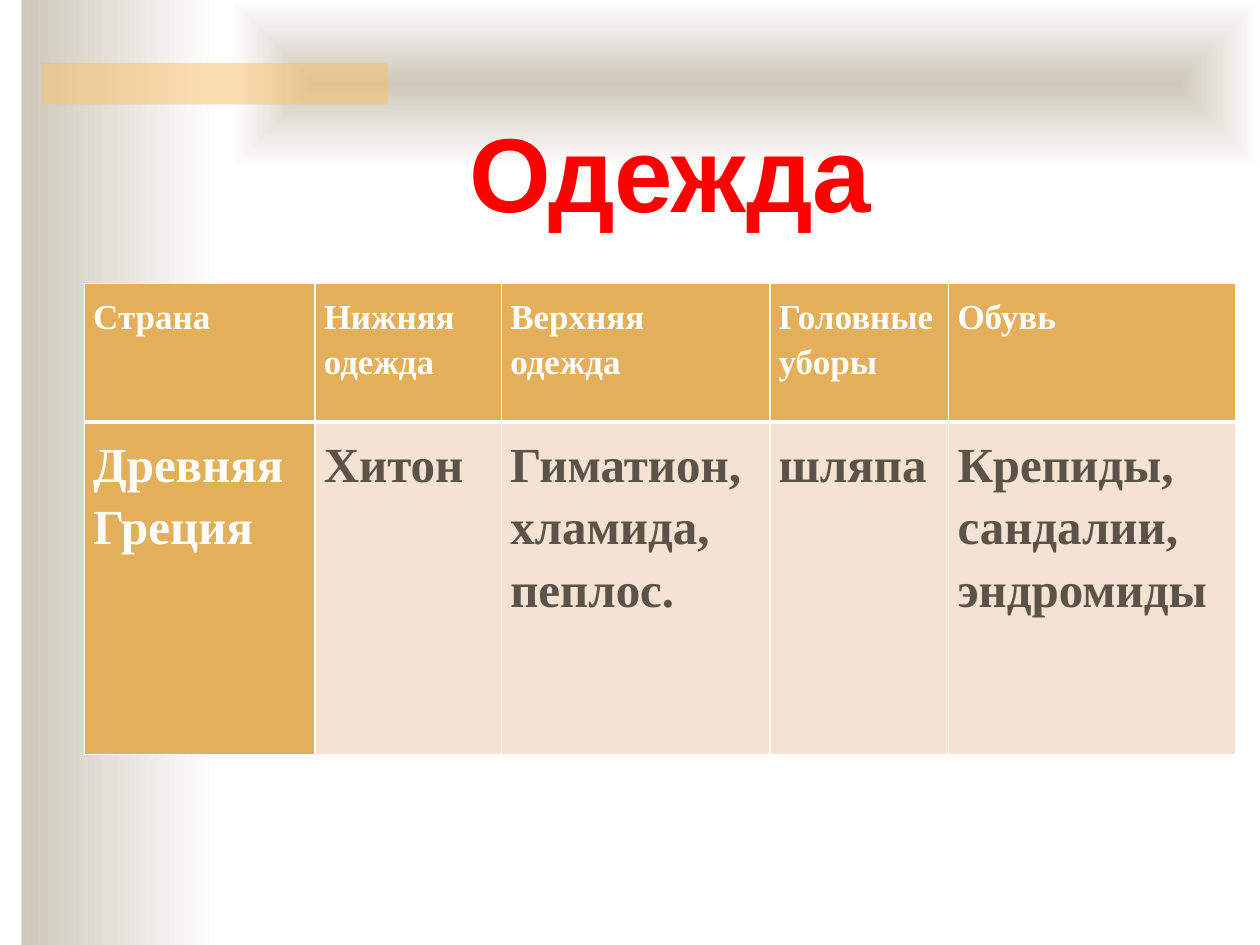
from lxml.etree import SubElement
from pptx import Presentation
from pptx.dml.color import RGBColor
from pptx.enum.shapes import MSO_SHAPE
from pptx.enum.text import MSO_ANCHOR, PP_ALIGN
from pptx.oxml import parse_xml
from pptx.oxml.ns import nsdecls, qn
from pptx.util import Inches, Pt

TITLE = "Одежда"
ROWS = [
    ["Страна", "Нижняя одежда", "Верхняя одежда", "Головные уборы", "Обувь"],
    ["Древняя Греция", "Хитон", "Гиматион, хламида, пеплос.", "шляпа",
     "Крепиды, сандалии, эндромиды"],
]
COLUMN_WIDTHS = [1.83, 1.48, 2.13, 1.42, 2.28]
ROW_HEIGHTS = [1.1, 2.64]
ROW_SIZES = [20, 28]

WHITE = RGBColor(0xFF, 0xFF, 0xFF)
STONE = RGBColor(0xCE, 0xC8, 0xBA)
AMBER = RGBColor(0xFA, 0xC1, 0x64)
GOLD = RGBColor(0xE3, 0xAF, 0x5A)
CREAM = RGBColor(0xF4, 0xE3, 0xD2)
BROWN = RGBColor(0x5B, 0x52, 0x49)
RED = RGBColor(0xFF, 0x00, 0x00)


def add_panel(page, left, top, width, height):
    panel = page.shapes.add_shape(
        MSO_SHAPE.RECTANGLE, Inches(left), Inches(top), Inches(width), Inches(height))
    panel.shadow.inherit = False
    panel.line.fill.background()
    return panel


def shade(panel):
    panel.fill.gradient()
    panel.fill.gradient_angle = 0
    for stop, color in zip(panel.fill.gradient_stops, (STONE, WHITE)):
        stop.color.rgb = color


def shade_from_center(panel):
    shade(panel)
    linear = panel.element.spPr.find(".//" + qn("a:lin"))
    linear.getparent().replace(linear, parse_xml(
        f'<a:path {nsdecls("a")} path="shape">'
        '<a:fillToRect l="50000" t="50000" r="50000" b="50000"/></a:path>'))


def set_borders(cell, widths):
    properties = cell._tc.get_or_add_tcPr()
    for index, (side, width) in enumerate(zip("LRTB", widths)):
        properties.insert(index, parse_xml(
            f'<a:ln{side} {nsdecls("a")} w="{Pt(width)}"><a:solidFill>'
            f'<a:srgbClr val="{WHITE}"/></a:solidFill></a:ln{side}>'))


def add_decoration(page):
    shade(add_panel(page, 0.17, 0, 1.58, 7.5))
    shade_from_center(add_panel(page, 1.83, 0, 8.17, 1.33))
    bar = add_panel(page, 0.33, 0.5, 2.75, 0.33)
    bar.fill.solid()
    bar.fill.fore_color.rgb = AMBER
    color = bar.element.spPr.find(".//" + qn("a:srgbClr"))
    SubElement(color, qn("a:alpha"), val="50000")


def add_title(page):
    title = page.shapes.title
    title.element.getparent().append(title.element)
    title.left, title.top = Inches(1.5), Inches(0.8)
    title.width, title.height = Inches(7.64), Inches(1.11)
    title.text_frame.text = TITLE
    title.text_frame.vertical_anchor = MSO_ANCHOR.MIDDLE
    para = title.text_frame.paragraphs[0]
    para.alignment = PP_ALIGN.CENTER
    para.font.name = "Arial"
    para.font.size = Pt(60)
    para.font.bold = True
    para.font.color.rgb = RED


def fill_cell(cell, text, row, column):
    heading = row == 0 or column == 0
    cell.text = text
    cell.margin_left = cell.margin_right = Inches(0.07)
    cell.margin_top = cell.margin_bottom = Inches(0.07)
    cell.fill.solid()
    cell.fill.fore_color.rgb = GOLD if heading else CREAM
    set_borders(cell, (1, 1, 1, 3) if row == 0 else (1, 1, 3, 1))
    para = cell.text_frame.paragraphs[0]
    para.line_spacing = 1.15
    para.font.name = "Times New Roman"
    para.font.size = Pt(ROW_SIZES[row])
    para.font.bold = True
    para.font.color.rgb = WHITE if heading else BROWN


def add_clothing_table(page):
    table = page.shapes.add_table(
        len(ROWS), len(COLUMN_WIDTHS), Inches(0.67), Inches(2.25),
        Inches(sum(COLUMN_WIDTHS)), Inches(sum(ROW_HEIGHTS))).table
    for column, width in zip(table.columns, COLUMN_WIDTHS):
        column.width = Inches(width)
    for row, height in zip(table.rows, ROW_HEIGHTS):
        row.height = Inches(height)
    for row, texts in enumerate(ROWS):
        for column, text in enumerate(texts):
            fill_cell(table.cell(row, column), text, row, column)


def main():
    deck = Presentation()
    deck.slide_width, deck.slide_height = Inches(10), Inches(7.5)
    page = deck.slides.add_slide(deck.slide_layouts[5])
    add_decoration(page)
    add_title(page)
    add_clothing_table(page)
    deck.save("out.pptx")


if __name__ == "__main__":
    main()
